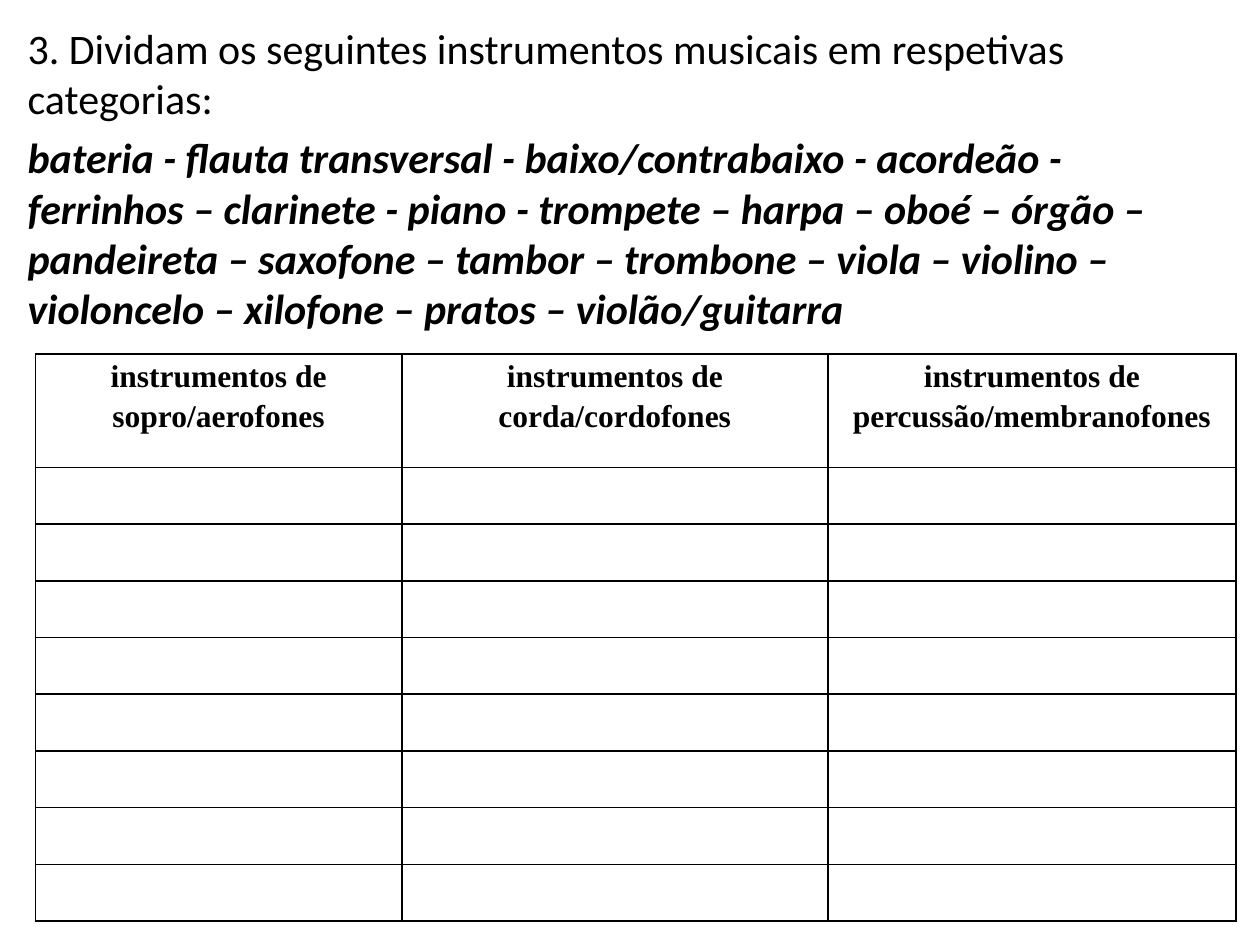
"""Build a worksheet slide for sorting musical instruments into families."""
from lxml.etree import SubElement
from pptx import Presentation
from pptx.dml.color import RGBColor
from pptx.enum.text import PP_ALIGN as Align
from pptx.oxml.ns import qn
from pptx.util import Inches, Pt

COLORS = {"ink": "000000", "paper": "FFFFFF"}
TASK = "3. Dividam os seguintes instrumentos musicais em respetivas categorias:"
INSTRUMENTS = (
    "bateria - flauta transversal - baixo/contrabaixo - acordeão - ferrinhos – "
    "clarinete - piano - trompete – harpa – oboé – órgão – pandeireta – saxofone – "
    "tambor – trombone – viola – violino – violoncelo – xilofone – pratos – "
    "violão/guitarra"
)
FAMILIES = [
    ("instrumentos de sopro/aerofones", 2.91),
    ("instrumentos de corda/cordofones", 3.38),
    ("instrumentos de percussão/membranofones", 3.24),
]
ANSWER_ROWS = 8
ROW_HEIGHT = 0.45
HEADER_HEIGHT = 2 * ROW_HEIGHT


def write(para, text, font="Calibri", size=24, bold=False, italic=False,
          align=Align.LEFT, before=0, spacing=1.0):
    para.alignment = align
    para.space_before = Pt(before)
    para.line_spacing = spacing
    span = para.add_run()
    span.text = text
    span.font.name = font
    span.font.size = Pt(size)
    span.font.bold = bold
    span.font.italic = italic
    span.font.color.rgb = RGBColor.from_string(COLORS["ink"])


def format_cell(cell):
    cell.margin_left = cell.margin_right = Inches(0.07)
    cell.margin_top = cell.margin_bottom = 0
    properties = cell._tc.get_or_add_tcPr()
    for side in ("a:lnL", "a:lnR", "a:lnT", "a:lnB"):
        border = SubElement(properties, qn(side), w=str(Pt(1)))
        fill = SubElement(border, qn("a:solidFill"))
        SubElement(fill, qn("a:srgbClr"), val=COLORS["ink"])
    cell.fill.solid()
    cell.fill.fore_color.rgb = RGBColor.from_string(COLORS["paper"])


def add_instructions(page):
    box = page.shapes.add_textbox(Inches(0.12), Inches(0.13), Inches(9.69), Inches(7.24))
    frame = box.text_frame
    frame.word_wrap = True
    write(frame.paragraphs[0], TASK, before=4.8)
    write(frame.add_paragraph(), INSTRUMENTS, bold=True, italic=True, before=4.8)


def add_answer_table(page):
    width = sum(column_width for _, column_width in FAMILIES)
    height = HEADER_HEIGHT + ANSWER_ROWS * ROW_HEIGHT
    table = page.shapes.add_table(
        ANSWER_ROWS + 1, len(FAMILIES),
        Inches(0.28), Inches(2.81), Inches(width), Inches(height)).table
    for index, row in enumerate(table.rows):
        row.height = Inches(ROW_HEIGHT if index else HEADER_HEIGHT)
    for index, (family, column_width) in enumerate(FAMILIES):
        table.columns[index].width = Inches(column_width)
        write(table.cell(0, index).text_frame.paragraphs[0], family,
              font="Times New Roman", size=18, bold=True,
              align=Align.CENTER, spacing=1.15)
    for cell in table.iter_cells():
        format_cell(cell)


def main():
    deck = Presentation()
    deck.slide_width, deck.slide_height = Inches(10), Inches(7.5)
    page = deck.slides.add_slide(deck.slide_layouts[6])
    add_instructions(page)
    add_answer_table(page)
    deck.save("out.pptx")


if __name__ == "__main__":
    main()
